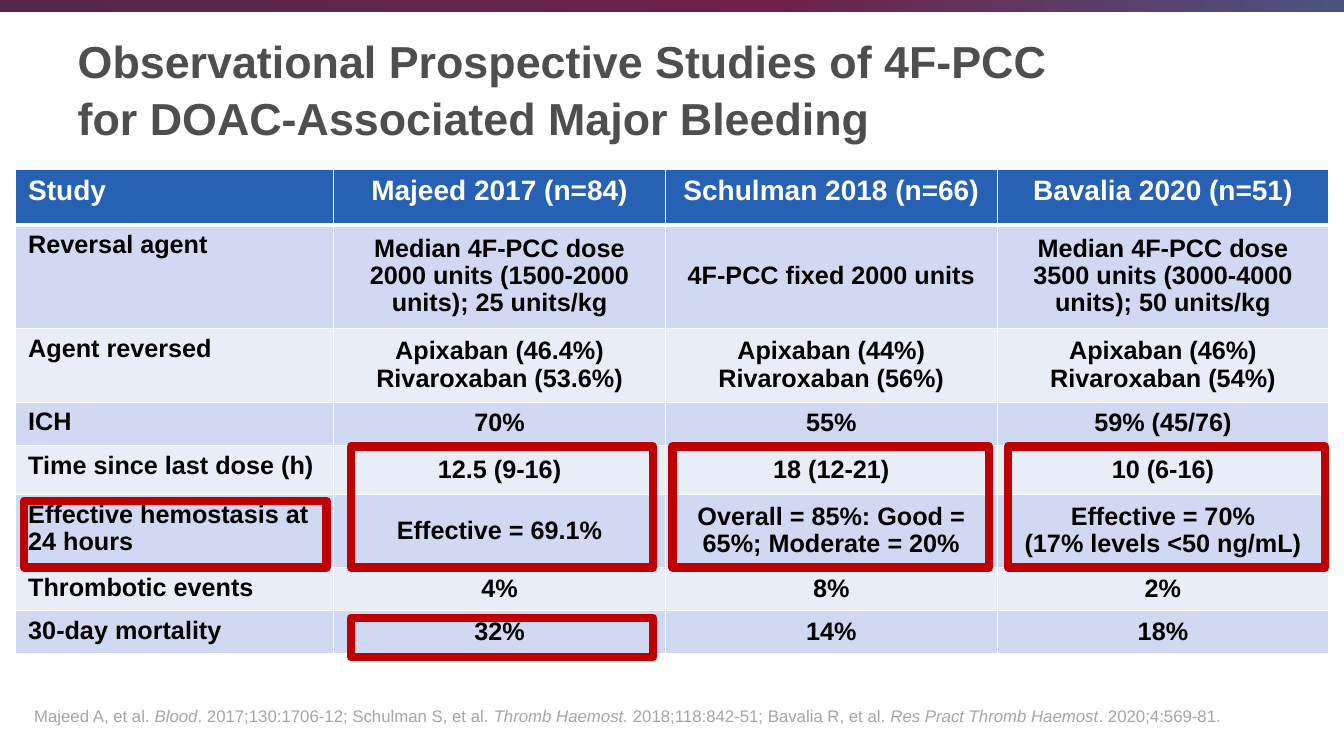
"""Build a slide comparing observational studies of 4F-PCC for DOAC-associated bleeding."""
import copy
from dataclasses import dataclass

import lxml.etree
import pptx
import pptx.dml.color
import pptx.enum.shapes
import pptx.enum.text
import pptx.oxml.ns
import pptx.util

EMU_PER_PX = 9144
FONT = "Arial"
WHITE, BLACK = "FFFFFF", "000000"
HEADER_FILL = "2661B4"
BAND_FILLS = ("E9EDF8", "D0D9F1")
HIGHLIGHT = "C00000"
TITLE = "Observational Prospective Studies of 4F-PCC\vfor DOAC-Associated Major Bleeding"
GRADIENT = ((0, "54284B"), (0.57, "6F2147"), (1, "4D5282"))
COLUMN_WIDTHS = (316, 329, 329, 329)


@dataclass(frozen=True)
class Box:
    left: int
    top: int
    width: int
    height: int

    def emu(self) -> tuple[int, int, int, int]:
        return px(self.left), px(self.top), px(self.width), px(self.height)


@dataclass(frozen=True)
class StudyRow:
    height: int
    cells: tuple[str, str, str, str]


@dataclass(frozen=True)
class CitationPart:
    text: str
    italic: bool = False


ROWS = (
    StudyRow(55, ("Study", "Majeed 2017 (n=84)", "Schulman 2018 (n=66)", "Bavalia 2020 (n=51)")),
    StudyRow(103, ("Reversal agent",
                   "Median 4F-PCC dose 2000 units (1500-2000 units); 25 units/kg",
                   "4F-PCC fixed 2000 units",
                   "Median 4F-PCC dose 3500 units (3000-4000 units); 50 units/kg")),
    StudyRow(73, ("Agent reversed",
                  "Apixaban (46.4%)\nRivaroxaban (53.6%)",
                  "Apixaban (44%)\nRivaroxaban (56%)",
                  "Apixaban (46%)\nRivaroxaban (54%)")),
    StudyRow(43, ("ICH", "70%", "55%", "59% (45/76)")),
    StudyRow(49, ("Time since last dose (h)", "12.5 (9-16)", "18 (12-21)", "10 (6-16)")),
    StudyRow(72, ("Effective hemostasis at 24 hours",
                  "Effective = 69.1%",
                  "Overall = 85%: Good = 65%; Moderate = 20%",
                  "Effective = 70%\n(17% levels <50 ng/mL)")),
    StudyRow(41, ("Thrombotic events", "4%", "8%", "2%")),
    StudyRow(43, ("30-day mortality", "32%", "14%", "18%")),
)
HIGHLIGHTS = (
    Box(24, 497, 300, 66),
    Box(348, 443, 300, 120),
    Box(348, 613, 300, 39),
    Box(667, 443, 314, 120),
    Box(1000, 443, 314, 120),
)
CITATION = (
    CitationPart("Majeed A, et al. "),
    CitationPart("Blood", True),
    CitationPart(". 2017;130:1706-12; Schulman S, et al. "),
    CitationPart("Thromb Haemost.", True),
    CitationPart(" 2018;118:842-51; Bavalia R, et al. "),
    CitationPart("Res Pract Thromb Haemost", True),
    CitationPart(". 2020;4:569-81."),
)


def px(length: int) -> int:
    return length * EMU_PER_PX


def rgb(colour: str) -> pptx.dml.color.RGBColor:
    return pptx.dml.color.RGBColor.from_string(colour)


def set_text(frame, text: str, *, size: int, colour: str, bold: bool = False,
             centred: bool = False, spacing: float = 1.0) -> None:
    frame.text = text
    frame.word_wrap = True
    alignment = pptx.enum.text.PP_ALIGN
    for paragraph in frame.paragraphs:
        paragraph.alignment = alignment.CENTER if centred else alignment.LEFT
        paragraph.line_spacing = spacing
        for run in paragraph.runs:
            format_font(run.font, size=size, colour=colour, bold=bold)


def format_font(font, *, size: int, colour: str, bold: bool = False, italic: bool = False) -> None:
    font.name, font.size = FONT, pptx.util.Pt(size)
    font.bold, font.italic = bold, italic
    font.color.rgb = rgb(colour)


def add_rectangle(slide, box: Box):
    shape = slide.shapes.add_shape(pptx.enum.shapes.MSO_SHAPE.RECTANGLE, *box.emu())
    shape.shadow.inherit = False
    return shape


def add_top_band(slide) -> None:
    shape = add_rectangle(slide, Box(0, 0, 1333, 12))
    shape.line.fill.background()
    shape.fill.gradient()
    shape.fill.gradient_angle = 0
    stop_list = shape.fill.gradient_stops
    first = next(shape.element.iter(pptx.oxml.ns.qn("a:gs")))
    first.addnext(copy.deepcopy(first))
    stop_list = shape.fill.gradient_stops
    for stop, (position, colour) in zip(stop_list, GRADIENT):
        stop.position = position
        stop.color.rgb = rgb(colour)


def add_title(slide) -> None:
    title = slide.shapes.title
    title.left, title.top, title.width, title.height = Box(67, 22, 1175, 130).emu()
    set_text(title.text_frame, TITLE, size=32, colour="4D4E4D", bold=True, spacing=1.05)
    title.text_frame.auto_size = pptx.enum.text.MSO_AUTO_SIZE.NONE
    title.text_frame.vertical_anchor = pptx.enum.text.MSO_ANCHOR.MIDDLE


def add_borders(cell, bottom_width: int) -> None:
    properties = cell._tc.get_or_add_tcPr()
    for side, width in (("L", 1), ("R", 1), ("T", 1), ("B", bottom_width)):
        line = lxml.etree.SubElement(properties, pptx.oxml.ns.qn(f"a:ln{side}"),
                                     w=str(pptx.util.Pt(width)))
        fill = lxml.etree.SubElement(line, pptx.oxml.ns.qn("a:solidFill"))
        lxml.etree.SubElement(fill, pptx.oxml.ns.qn("a:srgbClr"), val=WHITE)


def add_study_table(slide) -> None:
    box = Box(15, 168, sum(COLUMN_WIDTHS), sum(row.height for row in ROWS))
    table = slide.shapes.add_table(len(ROWS), len(COLUMN_WIDTHS), *box.emu()).table
    for column, width in zip(table.columns, COLUMN_WIDTHS):
        column.width = px(width)
    for row_index, row in enumerate(ROWS):
        table.rows[row_index].height = px(row.height)
        header = row_index == 0
        for column_index, text in enumerate(row.cells):
            cell = table.cell(row_index, column_index)
            add_borders(cell, 3 if header else 1)
            cell.fill.solid()
            cell.fill.fore_color.rgb = rgb(HEADER_FILL if header else BAND_FILLS[row_index % 2])
            cell.margin_left = cell.margin_right = px(13)
            cell.margin_top = cell.margin_bottom = px(7)
            anchor = pptx.enum.text.MSO_ANCHOR
            cell.vertical_anchor = anchor.TOP if header or column_index == 0 else anchor.MIDDLE
            set_text(cell.text_frame, text, size=20 if header else 18,
                     colour=WHITE if header else BLACK, bold=True,
                     centred=column_index > 0, spacing=0.96)


def add_highlight(slide, box: Box) -> None:
    shape = add_rectangle(slide, box)
    shape.fill.background()
    shape.line.color.rgb = rgb(HIGHLIGHT)
    shape.line.width = pptx.util.Pt(6)


def add_citation(slide) -> None:
    frame = slide.shapes.add_textbox(*Box(24, 682, 1295, 57).emu()).text_frame
    frame.word_wrap = True
    frame.vertical_anchor = pptx.enum.text.MSO_ANCHOR.MIDDLE
    for part in CITATION:
        run = frame.paragraphs[0].add_run()
        run.text = part.text
        format_font(run.font, size=12, colour="A6A6A6", italic=part.italic)


def main() -> None:
    presentation = pptx.Presentation()
    presentation.slide_width, presentation.slide_height = px(1333), px(750)
    slide = presentation.slides.add_slide(presentation.slide_layouts.get_by_name("Title Only"))
    add_top_band(slide)
    add_title(slide)
    add_citation(slide)
    add_study_table(slide)
    for box in HIGHLIGHTS:
        add_highlight(slide, box)
    presentation.save("out.pptx")


if __name__ == "__main__":
    main()
